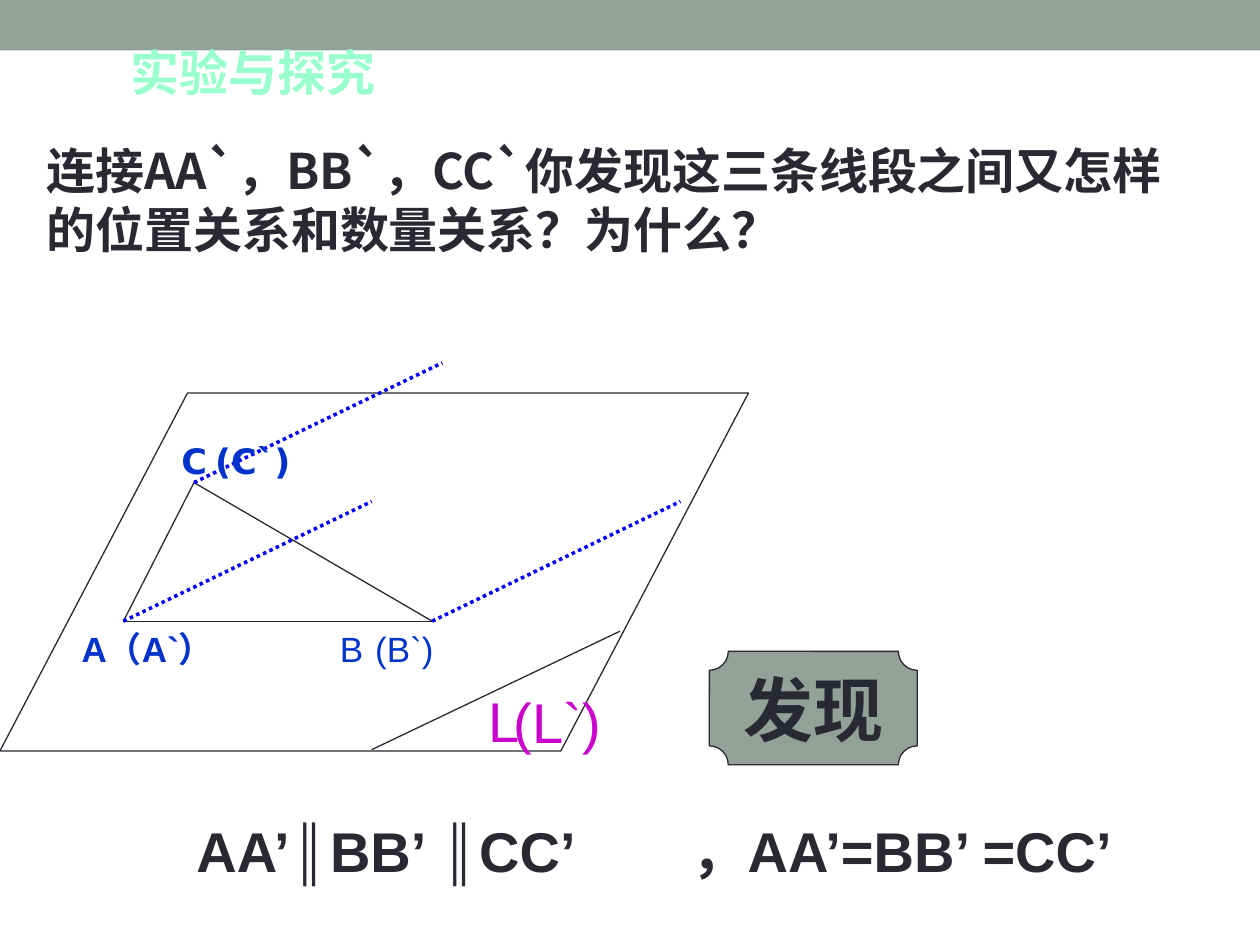
from lxml.etree import SubElement
from pptx import Presentation
from pptx.dml.color import RGBColor
from pptx.enum.dml import MSO_LINE
from pptx.enum.shapes import MSO_CONNECTOR, MSO_SHAPE
from pptx.enum.text import MSO_ANCHOR, PP_ALIGN
from pptx.oxml.ns import qn
from pptx.util import Inches, Pt

INK, SAGE, BLUE, DOTS, PURPLE, MINT = (
    "292934", "93A299", "0033CC", "0000FF", "CC00CC", "99FFCC")
LATIN, CJK, SANS = "Arial", "Noto Sans CJK SC", "DejaVu Sans"
rgb = RGBColor.from_string

deck = Presentation()
deck.slide_width, deck.slide_height = Inches(10), Inches(7.5)
COL = deck.slide_width / 10
ROW = deck.slide_height / 7.5
slide = deck.slides.add_slide(deck.slide_layouts[6])
shapes = slide.shapes


def write(frame, text, size, font, color, bold):
    """Fill a text frame with one run, using the font for Chinese text too."""
    paragraph = frame.paragraphs[0]
    run = paragraph.add_run()
    run.text = text
    run.font.size = Pt(size)
    run.font.name = font
    run.font.bold = bold
    run.font.color.rgb = rgb(color)
    SubElement(run.font._element, qn("a:ea"), typeface=font)
    return paragraph


def draw_line(start, end, color=INK, width=0.75, dash=None):
    line = shapes.add_connector(
        MSO_CONNECTOR.STRAIGHT,
        round(start[0] * COL), round(start[1] * ROW),
        round(end[0] * COL), round(end[1] * ROW))
    line.line.color.rgb = rgb(color)
    line.line.width = Pt(width)
    if dash:
        line.line.dash_style = dash
    SubElement(line._element.spPr, qn("a:effectLst"))


# Top band, folding plane and the "discovery" plaque
solids = {}
for part, preset, left, top, width, height, fill, outline, adjust in [
    ("band", MSO_SHAPE.RECTANGLE, 0, 0, 10, 0.4, SAGE, None, None),
    ("plane", MSO_SHAPE.PARALLELOGRAM, 0, 3.12, 5.94, 2.84, None, INK, 0.524),
    ("plaque", MSO_SHAPE.PLAQUE, 5.63, 5.17, 1.65, 0.9, SAGE, INK, 0.167),
]:
    solid = shapes.add_shape(preset, round(left * COL), round(top * ROW),
                             round(width * COL), round(height * ROW))
    solid.shadow.inherit = False
    if fill:
        solid.fill.solid()
        solid.fill.fore_color.rgb = rgb(fill)
    else:
        solid.fill.background()
    if outline:
        solid.line.color.rgb = rgb(outline)
        solid.line.width = Pt(0.75)
    else:
        solid.line.fill.background()
    if adjust:
        solid.adjustments[0] = adjust
    solids[part] = solid

plaque_frame = solids["plaque"].text_frame
plaque_frame.word_wrap = False
plaque_frame.vertical_anchor = MSO_ANCHOR.MIDDLE
write(plaque_frame, "发现", 40, LATIN, INK, True).alignment = PP_ALIGN.CENTER

# Triangle, fold line L and the equal parallel segments from each vertex
A, B, C = (0.98, 4.93), (3.43, 4.93), (1.54, 3.83)
for start, end in [(A, B), (C, A), (C, B), ((2.95, 5.95), (4.92, 5.01))]:
    draw_line(start, end)
for vertex in (C, A, B):
    draw_line(vertex, (vertex[0] + 1.97, vertex[1] - 0.95),
              DOTS, 2, MSO_LINE.ROUND_DOT)

# Labels, question, findings and title
for text, left, top, width, height, size, font, color, bold in [
    ("C", 1.34, 3.44, 0.55, 0.43, 20, SANS, BLUE, True),
    ("(C`)", 1.61, 3.44, 2.2, 0.43, 20, SANS, BLUE, True),
    ("A", 0.55, 4.93, 0.71, 0.43, 20, LATIN, BLUE, True),
    ("（A`）", 0.75, 4.93, 1.42, 0.43, 20, LATIN, BLUE, True),
    ("B", 2.6, 4.93, 0.63, 0.43, 20, LATIN, BLUE, False),
    ("(B`)", 2.88, 4.93, 2.84, 0.43, 20, LATIN, BLUE, False),
    ("L", 3.78, 5.4, 0.87, 0.63, 32, LATIN, PURPLE, False),
    ("(L`)", 3.98, 5.41, 1.42, 0.63, 32, LATIN, PURPLE, False),
    ("连接AA`，BB`，CC`你发现这三条线段之间又怎样的位置关系和数量关系？为什么？",
     0.27, 1.07, 9.42, 1.03, 28, CJK, INK, True),
    ("AA’∥BB’ ∥CC’", 1.46, 6.43, 3.75, 0.63, 32, LATIN, INK, True),
    ("，AA’=BB’ =CC’", 5.39, 6.43, 4, 0.63, 32, LATIN, INK, True),
    ("实验与探究", 0.94, 0.29, 2.44, 0.43, 28, CJK, MINT, True),
]:
    frame = shapes.add_textbox(round(left * COL), round(top * ROW),
                               round(width * COL), round(height * ROW)).text_frame
    frame.word_wrap = True
    paragraph = write(frame, text, size, font, color, bold)
    if font == CJK:
        paragraph.line_spacing = Pt(1.2 * size)

deck.save("out.pptx")
